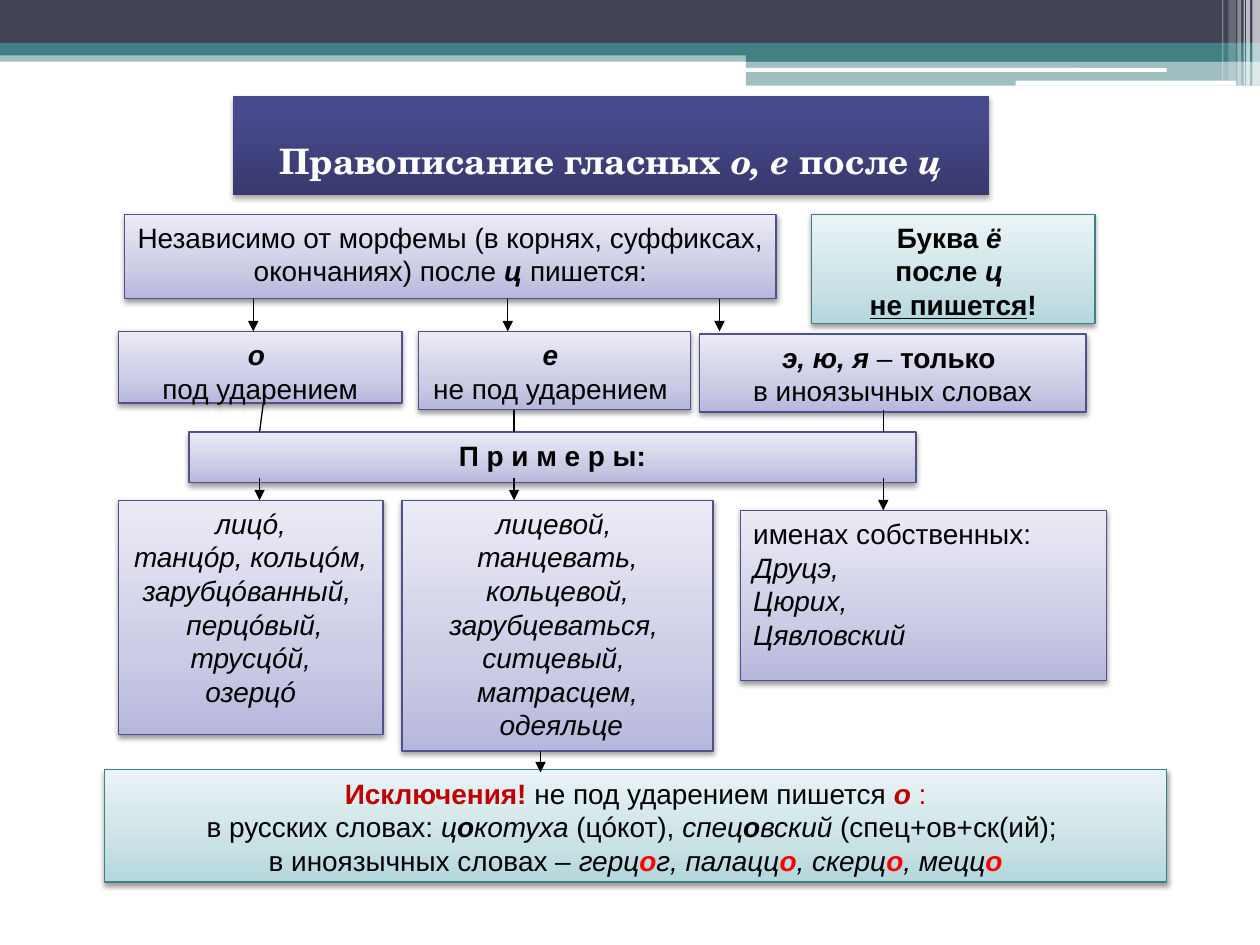
from lxml import etree
from pptx import Presentation
from pptx.dml.color import RGBColor
from pptx.enum.shapes import MSO_CONNECTOR, MSO_SHAPE
from pptx.enum.text import MSO_ANCHOR, PP_ALIGN
from pptx.oxml.ns import qn
from pptx.util import Inches, Pt

RECT, ROUND = MSO_SHAPE.RECTANGLE, MSO_SHAPE.ROUNDED_RECTANGLE
MID, TOP = MSO_ANCHOR.MIDDLE, MSO_ANCHOR.TOP
MIDDLE, JUST = PP_ALIGN.CENTER, PP_ALIGN.JUSTIFY
STRAIGHT = MSO_CONNECTOR.STRAIGHT

TEAL, WHITE, BLACK = "438086", "FFFFFF", "000000"
INKS = {"w": WHITE, "d": "C00000", "r": "FF0000"}

BANDS = [
    (RECT, 0, 0.4, 10, 0.09, TEAL, 50),
    (RECT, 0, 0, 10, 0.34, "424456", 100),
    (RECT, 0, 0.34, 10, 0.1, TEAL, 100),
    (RECT, 5.92, 0.39, 4.08, 0.1, TEAL, 100),
    (RECT, 5.92, 0.48, 4.08, 0.2, TEAL, 50),
    (ROUND, 5.91, 0.54, 3.35, 0.03, WHITE, 100),
    (ROUND, 8.06, 0.64, 1.75, 0.04, WHITE, 100),
]
STRIPES = [
    (9.94, 0.06, 0.68, 65), (9.89, 0.03, 0.68, 65), (9.87, 0.01, 0.68, 60),
    (9.82, 0.03, 0.68, 40), (9.75, 0.06, 0.64, 20), (9.7, 0.01, 0.64, 30),
]

LILAC = {"stops": [(0, "B6B7DC"), (35, "CCCCE6"), (100, "EBEBF6")],
         "line": "505188", "shade": (38, 1.6)}
MINT = {"stops": [(0, "B3D7DC"), (35, "CAE2E6"), (100, "EAF4F6")],
        "line": "407F85", "shade": (38, 1.6)}
NAVY = {"stops": [(0, "38396D"), (80, "484A8E"), (100, "474990")],
        "line": None, "shade": (35, 1.8)}

BODY = {"size": 16, "font": "Arial", "align": MIDDLE, "anchor": TOP,
        "pads": (0.1, 0.05, 0.1, 0.05)}
LEFT = {**BODY, "align": JUST}
HEAD = {"size": 20, "font": "TeX Gyre Schola", "align": MIDDLE, "anchor": MID,
        "pads": (0.05, 0.28, 0.05, 0.05)}

BOXES = [
    ((1.85, 0.76, 6, 0.79), NAVY, HEAD, [
        [("Правописание гласных ", "bw"), ("о, е", "biw"), (" после ", "bw"), ("ц", "biw")]]),
    ((0.99, 1.7, 5.17, 0.67), LILAC, BODY, [
        [("Независимо от морфемы (в корнях, суффиксах, окончаниях) после ", ""),
         ("ц ", "bi"), ("пишется:", "")]]),
    ((6.44, 1.7, 2.25, 0.87), MINT, BODY, [
        [("Буква ", "b"), ("ё ", "bi")],
        [("после ", "b"), ("ц ", "bi")],
        [("не пишется", "bu"), ("!", "b")]]),
    ((0.94, 2.63, 2.25, 0.57), LILAC, BODY, [
        [("о ", "bi")], [("под ударением", "")]]),
    ((3.32, 2.63, 2.16, 0.62), LILAC, BODY, [
        [("е ", "bi")], [("не под ударением ", "")]]),
    ((5.55, 2.65, 3.07, 0.62), LILAC, BODY, [
        [("э, ю, я", "bi"), (" – ", ""), ("только ", "b")],
        [("в иноязычных словах", "")]]),
    ((1.5, 3.43, 5.77, 0.4), LILAC, BODY, [[("П р и м е р ы:", "b")]]),
    ((0.94, 3.97, 2.1, 1.86), LILAC, BODY, [
        [(word, "i")] for word in (
            "лицó,", "танцóр, кольцóм, ", "зарубцóванный, ",
            " перцóвый, трусцóй,", "озерцó")]),
    ((3.19, 3.97, 2.47, 1.99), LILAC, BODY, [
        [(word, "i")] for word in (
            "лицевой, ", "танцевать,", " кольцевой, ", "зарубцеваться, ",
            "ситцевый, ", "матрасцем,", " одеяльце")]),
    ((5.88, 4.05, 2.9, 1.35), LILAC, LEFT, [
        [("именах собственных: ", "")],
        [("Друцэ, ", "i")], [("Цюрих, ", "i")], [("Цявловский", "i")]]),
    ((0.83, 6.11, 8.43, 0.89), MINT, BODY, [
        [("Исключения! ", "bd"), ("не под ударением пишется ", ""),
         ("о", "bid"), (" :", "d")],
        [("в русских словах: ", ""), ("ц", "i"), ("о", "bi"), ("котуха ", "i"),
         ("(цóкот), ", ""), ("спец", "i"), ("о", "bi"), ("вский ", "i"),
         ("(спец+ов+ск(ий); ", "")],
        [("в иноязычных словах – ", ""), ("герц", "i"), ("о", "bir"),
         ("г, палацц", "i"), ("о", "bir"), (", скерц", "i"), ("о", "bir"),
         (", мецц", "i"), ("о", "bir")]]),
]

LINKS = [
    (4.08, 3.25, 4.08, 3.43), (7.01, 3.25, 7.01, 3.43), (2.09, 3.2, 2.06, 3.43),
]
ARROWS = [
    (x, top, x, end) for x, top, end in (
        (2.06, 3.79, 3.97), (4.08, 3.79, 3.97), (7.01, 3.79, 4.05),
        (4.29, 5.96, 6.13),
        (2.01, 2.37, 2.63), (4.03, 2.37, 2.63), (5.71, 2.37, 2.63))
]


def rgb(code):
    return RGBColor.from_string(code)


def node(base, tag, **attrs):
    return etree.SubElement(base, qn("a:" + tag), {k: str(v) for k, v in attrs.items()})


def block(kind, *spot):
    shape = slide.shapes.add_shape(kind, *map(Inches, spot))
    shape.shadow.inherit = False
    shape.line.fill.background()
    return shape


def band(kind, x, y, w, h, color, alpha):
    shape = block(kind, x, y, w, h)
    shape.fill.solid()
    shape.fill.fore_color.rgb = rgb(color)
    if alpha < 100:
        tint = shape._element.spPr.find(".//" + qn("a:srgbClr"))
        node(tint, "alpha", val=alpha * 1000)


def dress(shape, look):
    shape.fill.gradient()
    shape.fill.gradient_angle = 90
    props = shape._element.spPr
    stops = props.find(".//" + qn("a:gsLst"))
    for old in list(stops):
        stops.remove(old)
    for pos, color in look["stops"]:
        node(node(stops, "gs", pos=pos * 1000), "srgbClr", val=color)
    if look["line"]:
        shape.line.color.rgb = rgb(look["line"])
        shape.line.width = Pt(0.75)
    alpha, dist = look["shade"]
    cast = node(props.find(qn("a:effectLst")), "outerShdw", blurRad=Pt(3.1),
                dist=Pt(dist), dir=90 * 60000, rotWithShape=0)
    node(node(cast, "srgbClr", val=BLACK), "alpha", val=alpha * 1000)


def write(frame, style, paras):
    frame.word_wrap = True
    frame.vertical_anchor = style["anchor"]
    for side, pad in zip(("left", "top", "right", "bottom"), style["pads"]):
        setattr(frame, "margin_" + side, Inches(pad))
    for i, runs in enumerate(paras):
        para = frame.paragraphs[0] if i == 0 else frame.add_paragraph()
        para.alignment = style["align"]
        for text, flags in runs:
            run = para.add_run()
            run.text = text
            ink = next((INKS[f] for f in flags if f in INKS), BLACK)
            run.font.color.rgb = rgb(ink)
            form = {"name": style["font"], "size": Pt(style["size"]),
                    "bold": "b" in flags, "italic": "i" in flags,
                    "underline": "u" in flags}
            for key, value in form.items():
                setattr(run.font, key, value)


def link(ends, arrow):
    wire = slide.shapes.add_connector(STRAIGHT, *map(Inches, ends))
    wire.line.color.rgb = rgb(BLACK)
    wire.line.width = Pt(0.75)
    if arrow:
        node(wire.line._get_or_add_ln(), "tailEnd", type="triangle")
    node(wire._element.spPr, "effectLst")


deck = Presentation()
deck.slide_width, deck.slide_height = Inches(10), Inches(7.5)
slide = deck.slides.add_slide(deck.slide_layouts[6])

for item in BANDS:
    band(*item)
for x, w, h, alpha in STRIPES:
    band(RECT, x, 0, w, h, WHITE, alpha)
for spot, look, style, paras in BOXES:
    box = block(RECT, *spot)
    dress(box, look)
    write(box.text_frame, style, paras)
for group, arrow in ((LINKS, False), (ARROWS, True)):
    for ends in group:
        link(ends, arrow)

deck.save("out.pptx")
